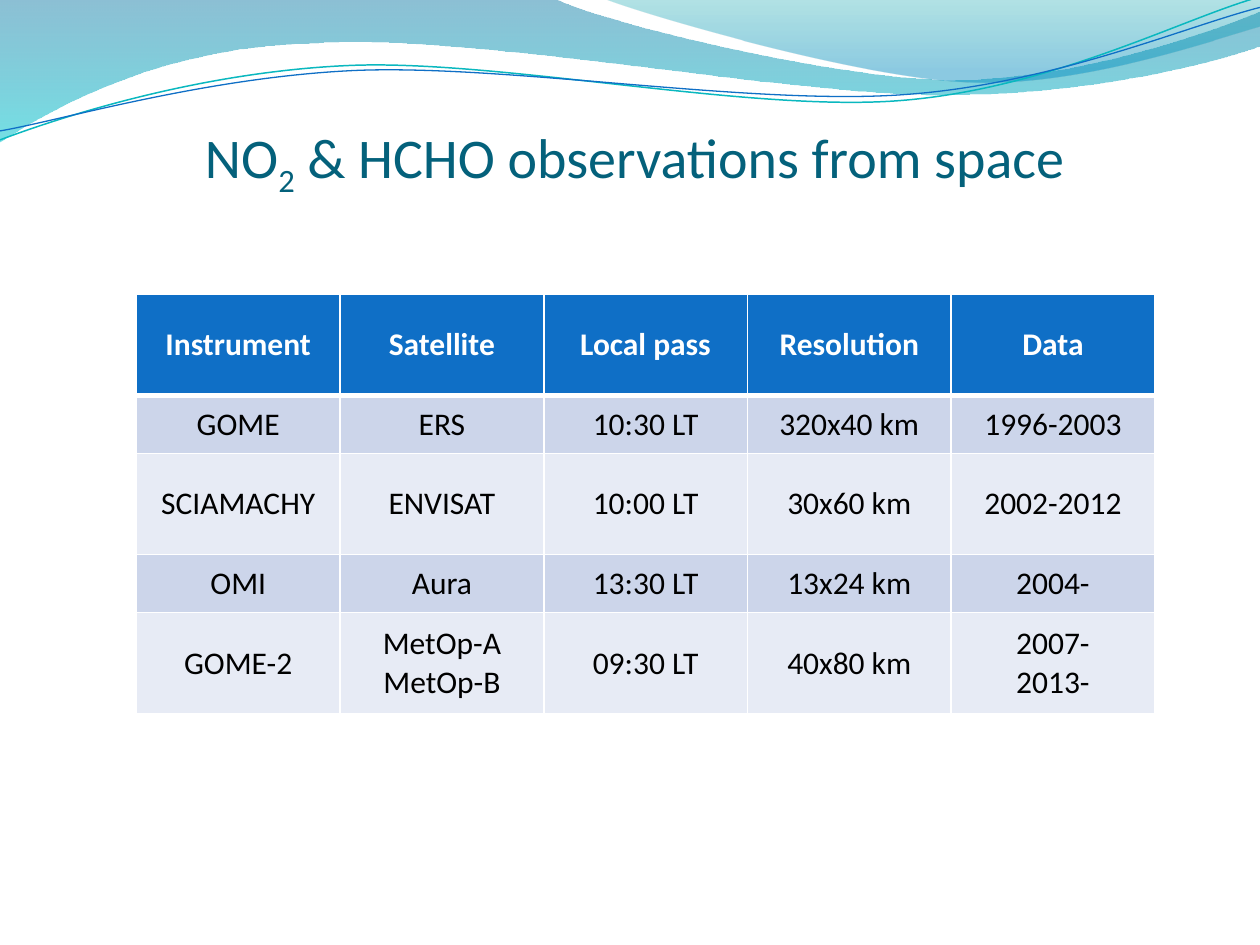
from math import cos, radians, sin

from lxml import etree
from pptx import Presentation
from pptx.dml.color import RGBColor
from pptx.enum.text import MSO_ANCHOR, PP_ALIGN
from pptx.oxml.ns import qn
from pptx.util import Cm, Pt

CENTER = PP_ALIGN.CENTER
MIDDLE, BOTTOM = MSO_ANCHOR.MIDDLE, MSO_ANCHOR.BOTTOM

COLORS = {
    "title": "04617B", "header": "0F6FC6", "odd": "CCD5EA", "even": "E7EBF5",
    "white": "FFFFFF", "black": "000000", "teal": "0AB8BF", "blue": "0F6FC6",
    "back_top": "0074A1", "back_end": "00C6CF",
    "front_top": "00A1A9", "front_end": "008BBF",
}

# Outlines in cm: a start point, then lines (1 point) or curves (3 points)
BACK_WAVE = [
    [(0, 0)], [(11.18, -0.03)],
    [(12.09, 0.43), (16.87, 1.6), (19.25, 1.6)],
    [(21.67, 1.6), (24.33, 0.66), (25.4, 0.23)],
    [(25.43, 0.91)],
    [(24.97, 1.12), (22.1, 1.93), (18.95, 1.91)],
    [(15.8, 1.91), (9.7, 0.71), (6.53, 0.86)],
    [(3.28, 0.91), (1.17, 2.11), (-0.03, 2.87)],
    [(0, 0)],
]
FRONT_WAVE = [
    [(12.17, -0.03)],
    [(12.93, 0.28), (17.32, 1.57), (19.53, 1.65)],
    [(21.74, 1.75), (24.41, 0.81), (25.4, 0.53)],
    [(25.4, 0)], [(12.17, -0.03)],
]
TEAL_CURVE = [
    [(0, 2.82)],
    [(1.22, 2.36), (4.01, 1.45), (7.04, 1.32)],
    [(10.03, 1.19), (15.06, 2.26), (18.11, 2.03)],
    [(21.16, 1.8), (23.83, 0.38), (25.35, -0.05)],
]
BLUE_CURVE = [
    [(0, 2.64)],
    [(1.19, 2.44), (4.17, 1.55), (7.19, 1.42)],
    [(10.24, 1.3), (15.16, 2.13), (18.21, 1.91)],
    [(21.23, 1.7), (23.9, 0.53), (25.4, 0.15)],
]
ROWS = [
    ["Instrument", "Satellite", "Local pass", "Resolution", "Data"],
    ["GOME", "ERS", "10:30 LT", "320x40 km", "1996-2003"],
    ["SCIAMACHY", "ENVISAT", "10:00 LT", "30x60 km", "2002-2012"],
    ["OMI", "Aura", "13:30 LT", "13x24 km", "2004-"],
    ["GOME-2", "MetOp-A\nMetOp-B", "09:30 LT", "40x80 km", "2007-\n2013-"],
]
TALL, SHORT = 2.04, 1.17
ROW_HEIGHTS = [TALL, SHORT, TALL, SHORT, TALL]


def rgb(name):
    return RGBColor.from_string(COLORS[name])


def add_run(p, text, size=18, color="black", bold=False, font="Calibri", baseline=0):
    r = p.add_run()
    r.text = text
    r.font.name, r.font.size, r.font.bold = font, Pt(size), bold
    r.font.color.rgb = rgb(color)
    if baseline:
        r.font._element.set("baseline", str(baseline * 1000))


def turn(outline, center, degrees):
    cx, cy = center
    c, s = cos(radians(degrees)), sin(radians(degrees))
    return [[(cx + (x - cx) * c - (y - cy) * s, cy + (x - cx) * s + (y - cy) * c)
             for x, y in segment] for segment in outline]


class SlideBuilder:
    def __init__(self, prs):
        self.s = prs.slides.add_slide(prs.slide_layouts[6])

    def outline(self, outline, closed):
        points = [(Cm(x), Cm(y)) for segment in outline for x, y in segment]
        builder = self.s.shapes.build_freeform(*points[0])
        builder.add_line_segments(points[1:], close=closed)
        sp = builder.convert_to_shape()
        sp.shadow.inherit = False
        # Join the three points of each curve into one Bezier segment
        lines = iter(list(sp._element.iter(qn("a:lnTo"))))
        for segment in outline[1:]:
            steps = [next(lines) for _ in segment]
            if len(steps) == 3:
                bezier = etree.Element(qn("a:cubicBezTo"))
                steps[0].addprevious(bezier)
                for step in steps:
                    bezier.append(step[0])
                    step.getparent().remove(step)
        return sp

    def wave(self, outline, stops):
        sp = self.outline(outline, True)
        sp.line.fill.background()
        sp.fill.gradient()
        sp.fill.gradient_angle = 270
        for stop, (position, color, _) in zip(sp.fill.gradient_stops, stops):
            stop.position, stop.color.rgb = position, rgb(color)
        for clr, (_, _, opacity) in zip(sp._element.spPr.iter(qn("a:srgbClr")), stops):
            etree.SubElement(clr, qn("a:alpha"), val=str(opacity * 1000))

    def curve(self, outline, center, color, width, tilt=2.7):
        sp = self.outline(turn(outline, center, tilt), False)
        sp.rotation = 360 - tilt
        sp.fill.background()
        sp.line.color.rgb, sp.line.width = rgb(color), Pt(width)

    def title(self, parts, left, top, width, height):
        tf = self.s.shapes.add_textbox(Cm(left), Cm(top), Cm(width), Cm(height)).text_frame
        tf.word_wrap, tf.vertical_anchor = True, BOTTOM
        tf.margin_left = tf.margin_right = tf.margin_bottom = 0
        p = tf.paragraphs[0]
        p.alignment = CENTER
        for text, baseline in parts:
            add_run(p, text, size=32, color="title", baseline=baseline)

    def border(self, cell, side, width):
        ln = etree.SubElement(cell._tc.get_or_add_tcPr(), qn("a:ln" + side),
                              w=str(Pt(width)))
        fill = etree.SubElement(ln, qn("a:solidFill"))
        etree.SubElement(fill, qn("a:srgbClr"), val=COLORS["white"])

    def cell(self, cell, text, row):
        header = row == 0
        for side in "LRTB" if header else "LRB":
            self.border(cell, side, 3 if header and side == "B" else 1)
        cell.fill.solid()
        cell.fill.fore_color.rgb = rgb("header" if header else "odd" if row % 2 else "even")
        cell.vertical_anchor = MIDDLE
        tf = cell.text_frame
        for i, line in enumerate(text.split("\n")):
            p = tf.add_paragraph() if i else tf.paragraphs[0]
            p.alignment = CENTER
            add_run(p, line, color="white" if header else "black", bold=header)

    def table(self, rows, heights, left, top, width):
        table = self.s.shapes.add_table(len(rows), len(rows[0]), Cm(left), Cm(top),
                                        Cm(width), Cm(sum(heights))).table
        for i, (texts, height) in enumerate(zip(rows, heights)):
            table.rows[i].height = Cm(height)
            for j, text in enumerate(texts):
                self.cell(table.cell(i, j), text, i)


def main():
    prs = Presentation()
    prs.slide_width, prs.slide_height = Cm(25.4), Cm(19.05)
    slide = SlideBuilder(prs)

    # Wave decoration
    slide.wave(BACK_WAVE, [(0, "back_top", 45), (1, "back_end", 55)])
    slide.wave(FRONT_WAVE, [(0, "front_top", 30), (0.8, "front_end", 45)])
    slide.curve(TEAL_CURVE, (12.67, 1.46), "teal", 0.85)
    slide.curve(BLUE_CURVE, (12.69, 1.5), "blue", 0.75)

    # Title and table of instruments
    slide.title([("NO", 0), ("2", -25), (" & HCHO observations from space", 0)],
                1.27, 0.84, 23.06, 3.17)
    slide.table(ROWS, ROW_HEIGHTS, 2.75, 5.93, 20.53)

    prs.save("out.pptx")


if __name__ == "__main__":
    main()
